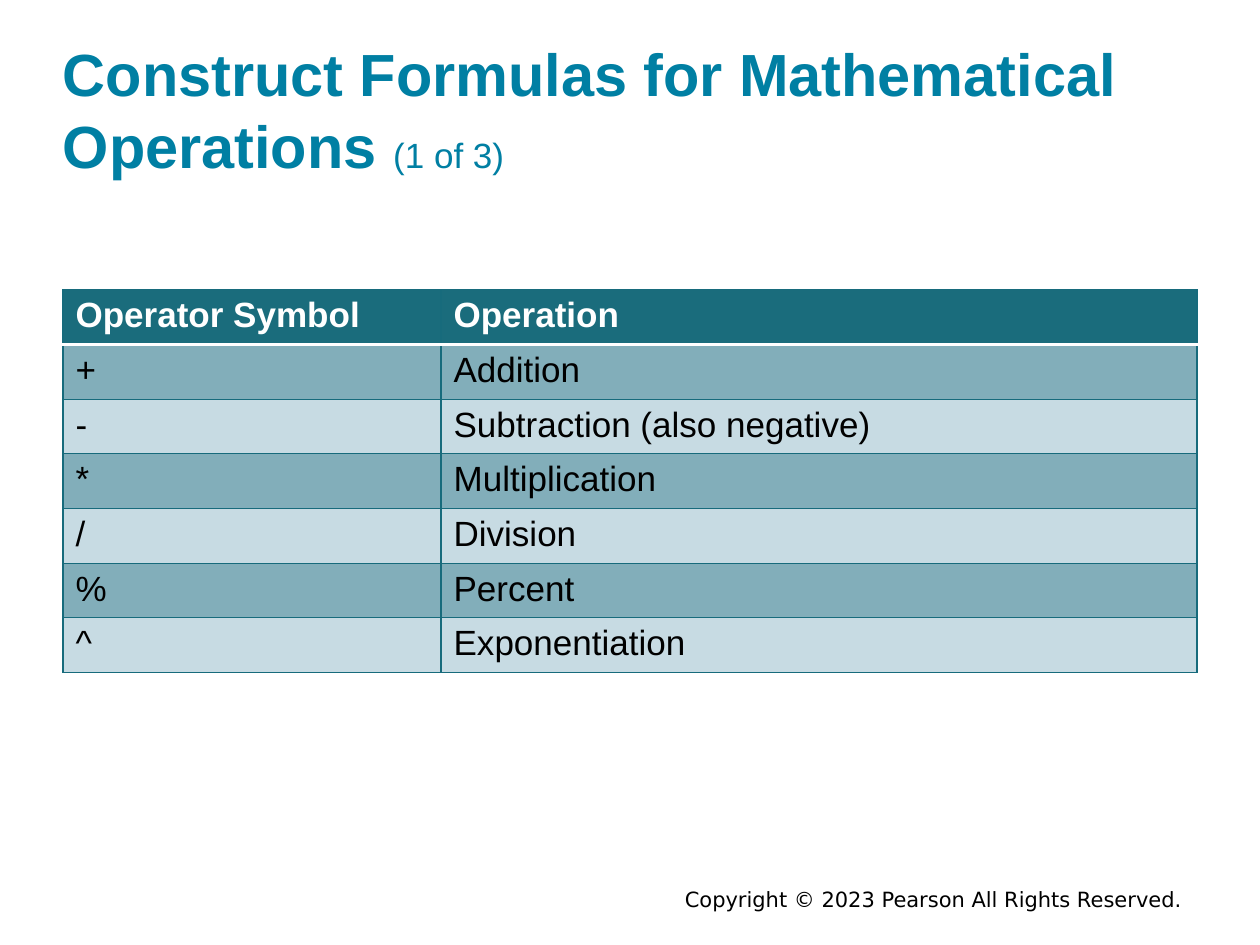
from dataclasses import dataclass

from lxml.etree import SubElement
from pptx import Presentation
from pptx.dml.color import RGBColor
from pptx.enum.text import MSO_ANCHOR, PP_ALIGN
from pptx.oxml.ns import qn
from pptx.util import Inches, Pt


@dataclass(frozen=True)
class Theme:
    title: str = "007FA3"
    header: str = "1A6C7C"
    border: str = "176B7C"
    dark_band: str = "82AEBA"
    light_band: str = "C7DBE3"
    white: str = "FFFFFF"
    black: str = "000000"
    font: str = "Arial"
    footer_font: str = "DejaVu Sans"
    title_size: int = 34
    body_size: int = 20
    footer_size: int = 12
    border_width: float = 0.75
    header_rule_width: float = 2


@dataclass(frozen=True)
class Operator:
    symbol: str
    operation: str


THEME = Theme()
HEADING = Operator("Operator Symbol", "Operation")
OPERATORS = [
    Operator("+", "Addition"),
    Operator("-", "Subtraction (also negative)"),
    Operator("*", "Multiplication"),
    Operator("/", "Division"),
    Operator("%", "Percent"),
    Operator("^", "Exponentiation"),
]
COLUMN_WIDTHS = (3, 6)
ROW_HEIGHT = 0.41


def add_text(paragraph, text: str, *, size: float = THEME.body_size,
             color: str = THEME.black, bold: bool = False,
             font: str = THEME.font) -> None:
    run = paragraph.add_run()
    run.text = text
    run.font.name = font
    run.font.size = Pt(size)
    run.font.bold = bold
    run.font.color.rgb = RGBColor.from_string(color)


def add_box(slide, left: float, top: float, width: float, height: float):
    shape = slide.shapes.add_textbox(Inches(left), Inches(top), Inches(width), Inches(height))
    shape.text_frame.word_wrap = True
    return shape.text_frame


def set_borders(cell, bottom_color: str, bottom_width: float,
                top_color: str, top_width: float) -> None:
    properties = cell._tc.get_or_add_tcPr()
    sides = (
        ("a:lnL", THEME.border, THEME.border_width),
        ("a:lnR", THEME.border, THEME.border_width),
        ("a:lnT", top_color, top_width),
        ("a:lnB", bottom_color, bottom_width),
    )
    # Borders come before the fill in the cell properties
    for position, (tag, color, width) in enumerate(sides):
        line = SubElement(properties, qn(tag), w=str(Pt(width)))
        fill = SubElement(line, qn("a:solidFill"))
        SubElement(fill, qn("a:srgbClr"), val=color)
        properties.insert(position, line)


def add_operator_table(slide, left: float, top: float) -> None:
    rows = [HEADING, *OPERATORS]
    table = slide.shapes.add_table(
        len(rows), len(COLUMN_WIDTHS), Inches(left), Inches(top),
        Inches(sum(COLUMN_WIDTHS)), Inches(ROW_HEIGHT * len(rows))).table
    for column, width in zip(table.columns, COLUMN_WIDTHS):
        column.width = Inches(width)

    thin = (THEME.border, THEME.border_width)
    rule = (THEME.white, THEME.header_rule_width)
    for index, operator in enumerate(rows):
        table.rows[index].height = Inches(ROW_HEIGHT)
        is_header = index == 0
        band = THEME.dark_band if index % 2 else THEME.light_band
        for column, text in enumerate((operator.symbol, operator.operation)):
            cell = table.cell(index, column)
            cell.fill.solid()
            cell.fill.fore_color.rgb = RGBColor.from_string(THEME.header if is_header else band)
            set_borders(cell, *(rule if is_header else thin), *(rule if index == 1 else thin))
            add_text(cell.text_frame.paragraphs[0], text, bold=is_header,
                     color=THEME.white if is_header else THEME.black)


def main() -> None:
    presentation = Presentation()
    presentation.slide_width = Inches(10)
    presentation.slide_height = Inches(7.5)
    slide = presentation.slides.add_slide(presentation.slide_layouts[6])

    # Copyright line
    footer = add_box(slide, 3.08, 6.99, 6.4, 0.28).paragraphs[0]
    footer.alignment = PP_ALIGN.RIGHT
    add_text(footer, "Copyright © 2023 Pearson All Rights Reserved.",
             size=THEME.footer_size, font=THEME.footer_font)

    # Title
    title = add_box(slide, 0.5, 0.23, 9, 1.2)
    title.margin_left = title.margin_right = title.margin_top = title.margin_bottom = 0
    title.vertical_anchor = MSO_ANCHOR.BOTTOM
    heading = title.paragraphs[0]
    add_text(heading, "Construct Formulas for Mathematical Operations ",
             size=THEME.title_size, color=THEME.title, bold=True)
    add_text(heading, "(1 of 3)", color=THEME.title)

    # Operators
    add_operator_table(slide, 0.5, 2.3)

    presentation.save("out.pptx")


if __name__ == "__main__":
    main()
